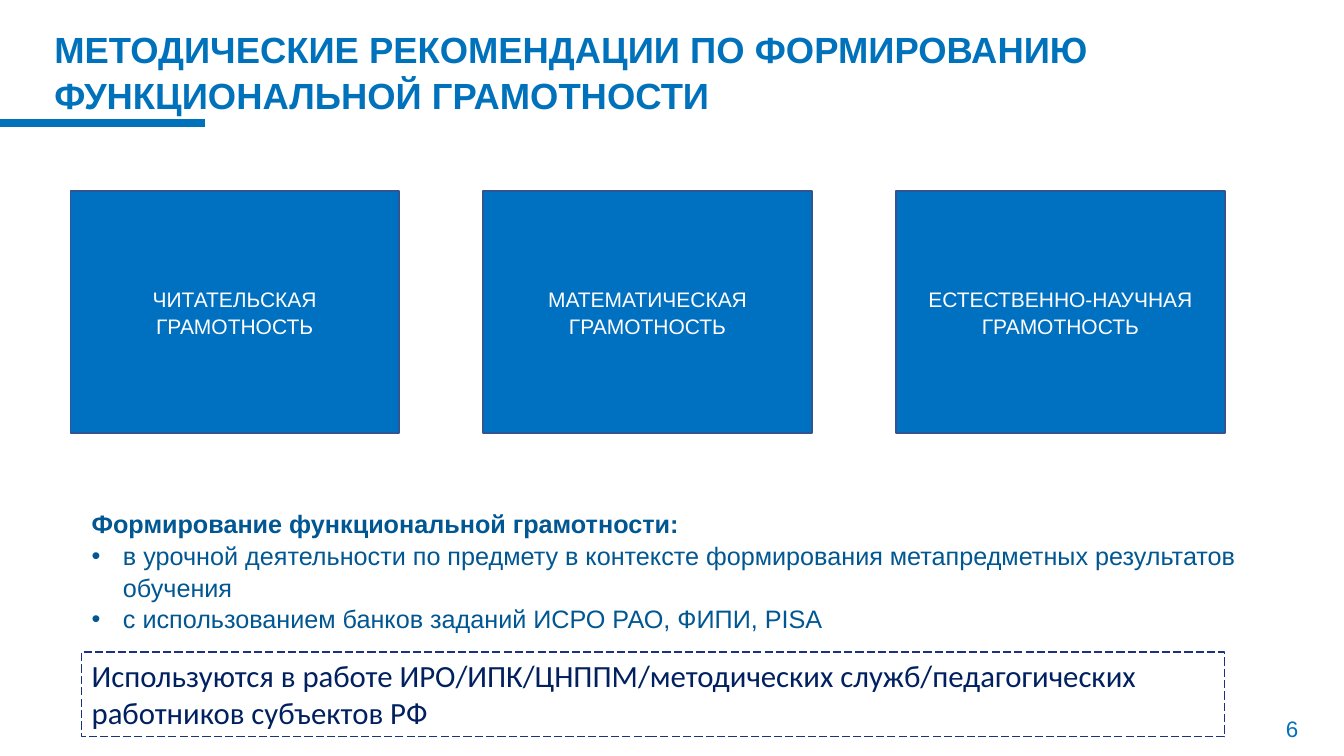
import pptx
import pptx.dml.color
import pptx.enum.dml
import pptx.enum.shapes
import pptx.enum.text
import pptx.util
from lxml import etree
from pptx.oxml.ns import qn
from pptx.util import Cm, Pt

COLORS = {
    "accent": "0072BC",
    "card": "0070C0",
    "card_line": "325491",
    "body": "005792",
    "usage": "002060",
    "usage_line": "1B3281",
    "white": "FFFFFF",
}
LITERACIES = ["ЧИТАТЕЛЬСКАЯ ГРАМОТНОСТЬ", "МАТЕМАТИЧЕСКАЯ ГРАМОТНОСТЬ",
              "ЕСТЕСТВЕННО-НАУЧНАЯ ГРАМОТНОСТЬ"]
APPROACHES = [
    "в урочной деятельности по предмету в контексте формирования "
    "метапредметных результатов обучения",
    "с использованием банков заданий ИСРО РАО, ФИПИ, PISA",
]
ALIGN = pptx.enum.text.PP_ALIGN
ANCHOR = pptx.enum.text.MSO_ANCHOR
RECTANGLE = pptx.enum.shapes.MSO_SHAPE.RECTANGLE


def rgb(name):
    return pptx.dml.color.RGBColor.from_string(COLORS[name])


def write(paragraph, text, size, color, bold=False, font="Arial",
          align=ALIGN.LEFT, spacing=1.05):
    paragraph.alignment = align
    paragraph.line_spacing = spacing
    run = paragraph.add_run()
    run.text = text
    run.font.name = font
    run.font.size = Pt(size)
    run.font.bold = bold
    run.font.color.rgb = rgb(color)


def add_text_frame(slide, box, anchor=ANCHOR.TOP):
    frame = slide.shapes.add_textbox(*map(Cm, box)).text_frame
    frame.word_wrap = True
    frame.vertical_anchor = anchor
    return frame


def add_rectangle(slide, box, line_color, line_width):
    rectangle = slide.shapes.add_shape(RECTANGLE, *map(Cm, box))
    rectangle.shadow.inherit = False
    rectangle.line.color.rgb = rgb(line_color)
    rectangle.line.width = Pt(line_width)
    rectangle.text_frame.word_wrap = True
    return rectangle


def add_bullet(paragraph, indent):
    properties = paragraph._p.get_or_add_pPr()
    properties.set("marL", str(Cm(indent)))
    properties.set("indent", str(-Cm(indent)))
    etree.SubElement(properties, qn("a:buFont")).set("typeface", "Arial")
    etree.SubElement(properties, qn("a:buChar")).set("char", "•")


def add_heading(slide, box):
    """Title with a short rule below it, running in from the slide's left edge."""
    left, top, width, height = box
    frame = add_text_frame(slide, box, ANCHOR.MIDDLE)
    write(frame.paragraphs[0],
          "МЕТОДИЧЕСКИЕ РЕКОМЕНДАЦИИ ПО ФОРМИРОВАНИЮ ФУНКЦИОНАЛЬНОЙ ГРАМОТНОСТИ",
          26, "accent", bold=True)
    rule_y = Cm(top + height + 0.66)
    rule = slide.shapes.add_connector(
        pptx.enum.shapes.MSO_CONNECTOR.STRAIGHT, 0, rule_y, Cm(5.16), rule_y)
    rule.line.color.rgb = rgb("accent")
    rule.line.width = Pt(6)
    etree.SubElement(rule._element.spPr, qn("a:effectLst"))


def add_literacy_cards(slide, box, card_width):
    left, top, width, height = box
    step = (width - card_width) / (len(LITERACIES) - 1)
    for index, literacy in enumerate(LITERACIES):
        card = add_rectangle(
            slide, (left + index * step, top, card_width, height), "card_line", 1)
        card.fill.solid()
        card.fill.fore_color.rgb = rgb("card")
        card.text_frame.vertical_anchor = ANCHOR.MIDDLE
        write(card.text_frame.paragraphs[0], literacy, 15, "white",
              align=ALIGN.CENTER)


def add_approaches(slide, box):
    frame = add_text_frame(slide, box)
    write(frame.paragraphs[0], "Формирование функциональной грамотности:",
          18, "body", bold=True)
    for approach in APPROACHES:
        paragraph = frame.add_paragraph()
        add_bullet(paragraph, 0.79)
        write(paragraph, approach, 18, "body")


def add_usage_note(slide, box):
    note = add_rectangle(slide, box, "usage_line", 0.75)
    note.fill.background()
    note.line.dash_style = pptx.enum.dml.MSO_LINE.LONG_DASH
    note.text_frame.vertical_anchor = ANCHOR.TOP
    write(note.text_frame.paragraphs[0],
          "Используются в работе ИРО/ИПК/ЦНППМ/методических служб/"
          "педагогических работников субъектов РФ",
          22, "usage", font="Calibri", spacing=1.0)


def add_page_number(slide, box):
    frame = add_text_frame(slide, box, ANCHOR.MIDDLE)
    write(frame.paragraphs[0], "6", 16, "accent", align=ALIGN.CENTER)


def main():
    deck = pptx.Presentation()
    deck.slide_width, deck.slide_height = Cm(33.87), Cm(19.05)
    slide = deck.slides.add_slide(deck.slide_layouts[6])
    add_heading(slide, (1.12, 1.14, 30.4, 1.3))
    add_literacy_cards(slide, (1.77, 4.81, 29.1, 6.1), card_width=8.29)
    add_approaches(slide, (2.06, 12.65, 29.46, 3.33))
    add_usage_note(slide, (2.06, 16.43, 28.8, 2.14))
    add_page_number(slide, (31.55, 17.83, 2.03, 1.04))
    deck.save("out.pptx")


if __name__ == "__main__":
    main()
